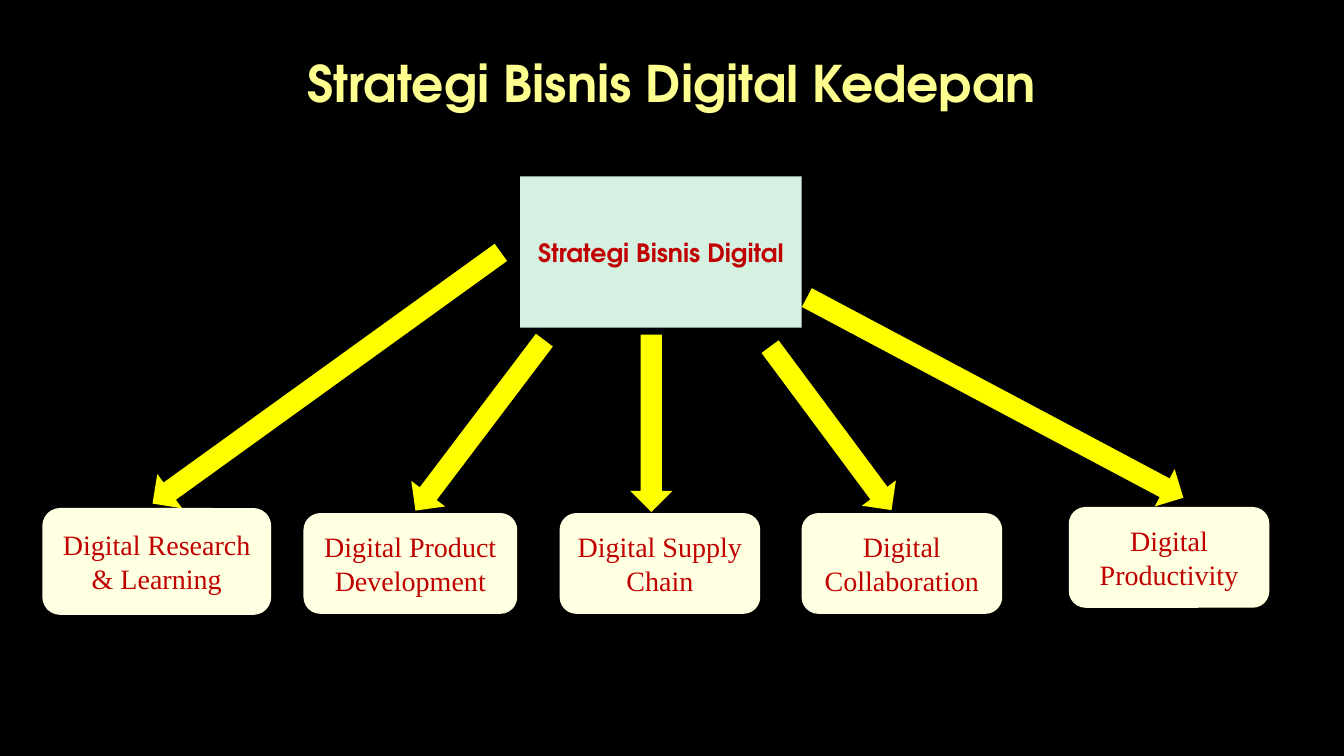
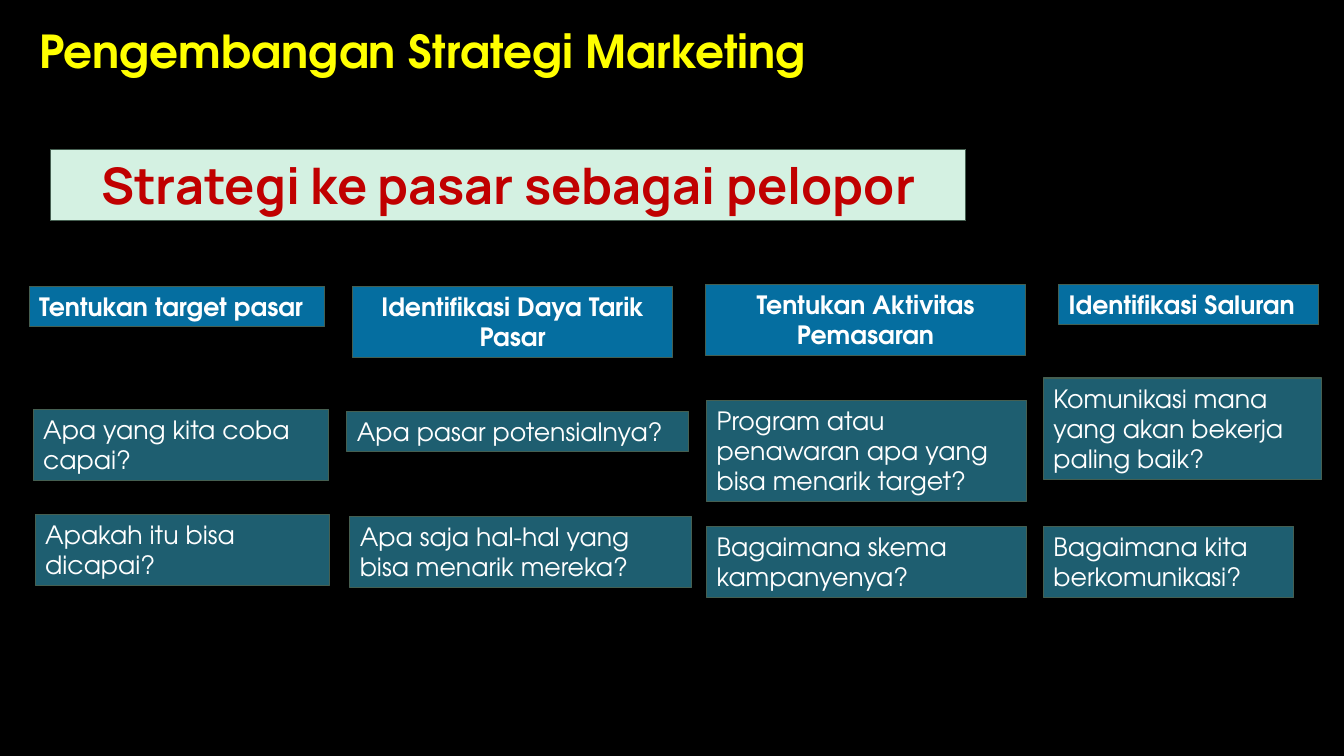
from dataclasses import dataclass

from pptx import Presentation
from pptx.dml.color import RGBColor
from pptx.enum import shapes, text
from pptx.util import Inches, Pt

COLOURS = {
    "background": "000000",
    "pale title": "FFFF8F",
    "yellow": "FFFF00",
    "mint": "D4F1E2",
    "cream": "FFFFE1",
    "red": "C00000",
    "white": "FFFFFF",
    "blue": "056EA0",
    "teal": "1E5E70",
    "outline": "455F51",
}
HEADING_FONT = "TeX Gyre Adventor"
RECTANGLE = shapes.MSO_SHAPE.RECTANGLE
LEFT, CENTER = text.PP_ALIGN.LEFT, text.PP_ALIGN.CENTER
TOP, MIDDLE, BOTTOM = (text.MSO_ANCHOR.TOP, text.MSO_ANCHOR.MIDDLE,
                       text.MSO_ANCHOR.BOTTOM)


@dataclass(frozen=True)
class TextStyle:
    size: float
    colour: str
    font: str = HEADING_FONT
    bold: bool = False
    anchor: text.MSO_ANCHOR = TOP
    line_spacing: float = 1.0


@dataclass(frozen=True)
class BoxStyle:
    fill: str
    text: TextStyle
    shape: shapes.MSO_SHAPE = RECTANGLE
    outlined: bool = False


@dataclass(frozen=True)
class Box:
    label: str
    left: float
    top: float
    width: float
    height: float
    align: text.PP_ALIGN = LEFT


@dataclass(frozen=True)
class Arrow:
    left: float
    top: float
    length: float
    rotation: float = 0


# Shared styles
HUB = BoxStyle("mint", TextStyle(18, "red", bold=True, anchor=MIDDLE))
BRANCH = BoxStyle("cream", TextStyle(20, "red", "Times New Roman", anchor=MIDDLE),
                  shapes.MSO_SHAPE.ROUNDED_RECTANGLE)
BANNER = BoxStyle("mint", TextStyle(36, "red", "Manrope", True), outlined=True)
HEADER = BoxStyle("blue", TextStyle(18, "white", bold=True), outlined=True)
QUESTION = BoxStyle("teal", TextStyle(18, "white"), outlined=True)

# Slide content
ARROW_WIDTH = 0.42
ARROWS = [
    Arrow(3.03, 1.62, 4.26, 54.2),
    Arrow(4.55, 3.16, 2.12, 37.1),
    Arrow(6.25, 3.32, 1.76),
    Arrow(9.66, 1.83, 4.23, 298),
    Arrow(8.03, 3.24, 2.02, 323.4),
]
BRANCHES = [
    Box("Digital Research & Learning", 0.42, 5.04, 2.27, 1.06, CENTER),
    Box("Digital Product Development", 3.01, 5.09, 2.12, 1, CENTER),
    Box("Digital Supply Chain", 5.55, 5.09, 1.99, 1, CENTER),
    Box("Digital Collaboration", 7.95, 5.09, 1.99, 1, CENTER),
    Box("Digital Productivity", 10.6, 5.03, 1.99, 1, CENTER),
]
ONE_LINE, TWO_LINES, THREE_LINES = 0.4, 0.71, 1.01
HEADERS = [
    Box("Tentukan target pasar", 0.29, 2.84, 2.93, ONE_LINE),
    Box("Identifikasi Daya Tarik Pasar", 3.5, 2.84, 3.17, TWO_LINES, CENTER),
    Box("Tentukan Aktivitas Pemasaran", 7, 2.82, 3.17, TWO_LINES, CENTER),
    Box("Identifikasi Saluran", 10.5, 2.82, 2.58, ONE_LINE),
]
QUESTIONS = [
    Box("Apa yang kita coba capai?", 0.33, 4.06, 2.93, TWO_LINES),
    Box("Apa pasar potensialnya?", 3.44, 4.08, 3.39, ONE_LINE),
    Box("Program atau penawaran apa yang bisa menarik target?",
        7.01, 3.97, 3.17, THREE_LINES),
    Box("Komunikasi mana yang akan bekerja paling baik?",
        10.35, 3.75, 2.76, THREE_LINES),
    Box("Apakah itu bisa dicapai?", 0.35, 5.1, 2.92, TWO_LINES),
    Box("Apa saja hal-hal yang bisa menarik mereka?", 3.47, 5.12, 3.39, TWO_LINES),
    Box("Bagaimana skema kampanyenya?", 7.01, 5.22, 3.17, TWO_LINES),
    Box("Bagaimana kita berkomunikasi?", 10.35, 5.22, 2.48, TWO_LINES),
]


def colour(name: str) -> RGBColor:
    return RGBColor.from_string(COLOURS[name])


def place(box: Box) -> tuple:
    return tuple(Inches(n) for n in (box.left, box.top, box.width, box.height))


def write(shape, box: Box, style: TextStyle) -> None:
    frame = shape.text_frame
    frame.word_wrap = True
    frame.vertical_anchor = style.anchor
    paragraph = frame.paragraphs[0]
    paragraph.alignment = box.align
    paragraph.line_spacing = style.line_spacing
    run = paragraph.add_run()
    run.text = box.label
    run.font.name = style.font
    run.font.size = Pt(style.size)
    run.font.bold = style.bold
    run.font.color.rgb = colour(style.colour)


def paint(shape, fill: str, outlined: bool = False) -> None:
    shape.shadow.inherit = False
    shape.fill.solid()
    shape.fill.fore_color.rgb = colour(fill)
    if outlined:
        shape.line.color.rgb = colour("outline")
        shape.line.width = Pt(0.75)
    else:
        shape.line.fill.background()


def add_slide(presentation, title: Box, size: float, title_colour: str):
    slide = presentation.slides.add_slide(presentation.slide_layouts[6])
    slide.background.fill.solid()
    slide.background.fill.fore_color.rgb = colour("background")
    style = TextStyle(size, title_colour, bold=True, anchor=BOTTOM, line_spacing=0.9)
    write(slide.shapes.add_textbox(*place(title)), title, style)
    return slide


def add_boxes(slide, boxes: list[Box], style: BoxStyle) -> None:
    for box in boxes:
        shape = slide.shapes.add_shape(style.shape, *place(box))
        paint(shape, style.fill, style.outlined)
        write(shape, box, style.text)
        if style.outlined:
            shape.text_frame.auto_size = text.MSO_AUTO_SIZE.SHAPE_TO_FIT_TEXT


def add_arrows(slide, arrows: list[Arrow]) -> None:
    for arrow in arrows:
        shape = slide.shapes.add_shape(
            shapes.MSO_SHAPE.DOWN_ARROW, Inches(arrow.left), Inches(arrow.top),
            Inches(ARROW_WIDTH), Inches(arrow.length))
        shape.rotation = arrow.rotation
        paint(shape, "yellow")


def main() -> None:
    presentation = Presentation()
    presentation.slide_width = Inches(13.33)
    presentation.slide_height = Inches(7.5)

    # Digital business strategy and its five branches
    title = Box("Strategi Bisnis Digital Kedepan", 1.66, 0.42, 10, 0.75, CENTER)
    slide = add_slide(presentation, title, 36, "pale title")
    hub = Box("Strategi Bisnis Digital", 5.16, 1.75, 2.79, 1.5, CENTER)
    add_boxes(slide, [hub], HUB)
    add_arrows(slide, ARROWS)
    add_boxes(slide, BRANCHES, BRANCH)

    # Marketing strategy: headers above their questions
    title = Box("Pengembangan Strategi Marketing", 0.29, 0.25, 7.95, 0.58)
    slide = add_slide(presentation, title, 32.4, "yellow")
    banner = Box("Strategi ke pasar sebagai pelopor", 0.5, 1.48, 9.08, 0.71, CENTER)
    add_boxes(slide, [banner], BANNER)
    add_boxes(slide, HEADERS, HEADER)
    add_boxes(slide, QUESTIONS, QUESTION)

    presentation.save("out.pptx")


if __name__ == "__main__":
    main()
